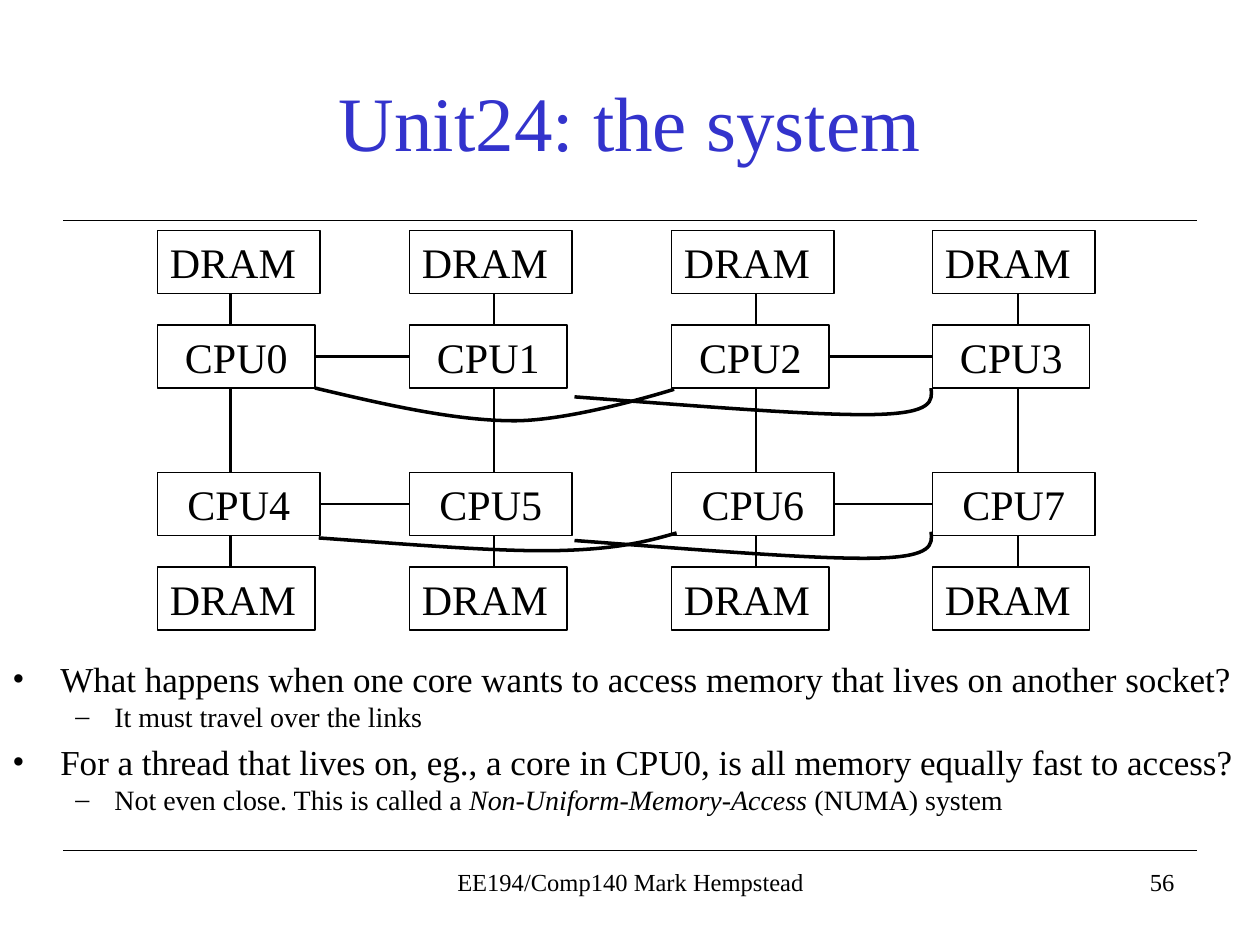
from lxml import etree
from pptx import Presentation
from pptx.dml.color import RGBColor
from pptx.enum.shapes import MSO_CONNECTOR, MSO_SHAPE
from pptx.enum.text import MSO_ANCHOR, MSO_AUTO_SIZE, PP_ALIGN
from pptx.oxml.ns import qn
from pptx.util import Inches, Pt

BLACK = RGBColor(0, 0, 0)
WHITE = RGBColor(255, 255, 255)
BLUE = RGBColor(0x33, 0x33, 0xCC)
FONT = "Times New Roman"
LEFT, CENTER, RIGHT = PP_ALIGN.LEFT, PP_ALIGN.CENTER, PP_ALIGN.RIGHT
TOP, MIDDLE = MSO_ANCHOR.TOP, MSO_ANCHOR.MIDDLE
GROW = MSO_AUTO_SIZE.SHAPE_TO_FIT_TEXT
STRAIGHT = MSO_CONNECTOR.STRAIGHT
RECT = MSO_SHAPE.RECTANGLE

COLS = [1.25, 3.25, 5.33, 7.4]
BUSES = [(1.83, 2.17), (3.92, 2.25), (6, 2.25), (8.08, 2.25)]
ROWS = [
    (1.83, 1.29, None),
    (2.58, 1.25, 0),
    (3.75, 1.29, 4),
    (4.5, 1.25, None),
]
CURVES = [
    [(2.5, 3.08), (3.05, 3.21), (3.61, 3.34), (4.08, 3.34),
     (4.56, 3.34), (5.35, 3.09), (5.35, 3.09)],
    [(2.53, 4.27), (3.24, 4.32), (3.94, 4.38), (4.42, 4.37),
     (4.89, 4.36), (5.13, 4.3), (5.37, 4.23)],
]
HOOK = [(4.56, 3.15), (5.51, 3.22), (6.46, 3.3), (6.94, 3.29),
        (7.41, 3.28), (7.4, 3.18), (7.39, 3.08)]
HOOK_DROP = 1.14
POINTS = [
    (0, ["What happens when one core wants to access memory that lives on another socket?"]),
    (1, ["It must travel over the links"]),
    (0, ["For a thread that lives on, eg., a core in CPU0, is all memory equally fast to access?"]),
    (1, ["Not even close. This is called a ", "Non-Uniform-Memory-Access ", "(NUMA) system"]),
]
LEVELS = [(20, 0.38, -0.38, "•", 4), (16, 0.81, -0.31, "–", 0)]


class Deck:
    """Hold the style and the current slide."""

    def __init__(self):
        self.prs = Presentation()
        self.prs.slide_width = Inches(10)
        self.prs.slide_height = Inches(7.5)
        self.slide = self.prs.slides.add_slide(self.prs.slide_layouts[6])
        self.shapes = self.slide.shapes

    def style(self, para, size, color=BLACK, align=LEFT):
        para.alignment = align
        para.font.name = FONT
        para.font.size = Pt(size)
        para.font.color.rgb = color

    def frame(self, x, y, w, h, anchor=TOP):
        area = self.shapes.add_textbox(Inches(x), Inches(y), Inches(w), Inches(h))
        area.text_frame.word_wrap = True
        area.text_frame.vertical_anchor = anchor
        return area.text_frame

    def text(self, words, x, y, w, h, size, color=BLACK, align=CENTER, anchor=TOP):
        para = self.frame(x, y, w, h, anchor).paragraphs[0]
        para.text = words
        self.style(para, size, color, align)

    def line(self, x1, y1, x2, y2, width):
        link = self.shapes.add_connector(
            STRAIGHT, Inches(x1), Inches(y1), Inches(x2), Inches(y2))
        link.line.color.rgb = BLACK
        link.line.width = Pt(width)
        etree.SubElement(link._element.spPr, qn("a:effectLst"))
        return link

    def join(self, start, end):
        link = self.line(0, 0, 1, 1, 1.5)
        link.begin_connect(start, 3)
        link.end_connect(end, 1)

    def box(self, words, x, y, w, align):
        box = self.shapes.add_shape(RECT, Inches(x), Inches(y), Inches(w), Inches(0.5))
        box.shadow.inherit = False
        box.fill.solid()
        box.fill.fore_color.rgb = WHITE
        box.line.color.rgb = BLACK
        box.line.width = Pt(0.75)
        box.text_frame.auto_size = GROW
        box.text_frame.vertical_anchor = TOP
        para = box.text_frame.paragraphs[0]
        para.text = words
        self.style(para, 24, align=align)
        return box

    def curve(self, pts):
        spots = [(Inches(x), Inches(y)) for x, y in pts]
        pen = self.shapes.build_freeform(*spots[0])
        pen.add_line_segments(spots[3::3], close=False)
        wire = pen.convert_to_shape()
        wire.shadow.inherit = False
        wire.fill.background()
        wire.line.color.rgb = BLACK
        wire.line.width = Pt(2)
        for i, leg in enumerate(list(wire._element.iter(qn("a:lnTo")))):
            bend = etree.Element(qn("a:cubicBezTo"))
            for x, y in spots[3 * i + 1:3 * i + 4]:
                etree.SubElement(bend, qn("a:pt"),
                                 x=str(x - wire.left), y=str(y - wire.top))
            leg.getparent().replace(leg, bend)

    def bullets(self, items, x, y, w, h):
        frame = self.frame(x, y, w, h)
        for i, (level, parts) in enumerate(items):
            para = frame.add_paragraph() if i else frame.paragraphs[0]
            size, left, hang, mark, gap = LEVELS[level]
            para.level = level
            para.space_before = Pt(gap)
            self.style(para, size)
            for n, part in enumerate(parts):
                run = para.add_run()
                run.text = part
                if n == 1:
                    run.font.italic = True
            props = para._p.get_or_add_pPr()
            props.set("marL", str(Inches(left)))
            props.set("indent", str(Inches(hang)))
            base = props.find(qn("a:defRPr"))
            base.addprevious(etree.Element(qn("a:buFont"), typeface=FONT))
            base.addprevious(etree.Element(qn("a:buChar"), char=mark))


def main():
    deck = Deck()
    for y in (6.75, 1.75):
        deck.line(0.5, y, 9.5, y, 0.75)
    deck.text("56", 6.25, 6.83, 3.17, 0.5, 14, align=RIGHT)
    for x, y in BUSES:
        deck.line(x, y, x, y + 2.5, 1.5)
    deck.text("Unit24: the system", 0.75, 0.33, 8.5, 1.25, 44, BLUE, anchor=MIDDLE)
    deck.bullets(POINTS, 0, 5.17, 9.92, 1.58)
    deck.text("EE194/Comp140 Mark Hempstead", 3.42, 6.83, 3.17, 0.5, 14)

    for y, w, first in ROWS:
        if first is None:
            for x in COLS:
                deck.box("DRAM", x, y, w, LEFT)
        else:
            cpus = [deck.box(f"CPU{first + i}", x, y, w, CENTER)
                    for i, x in enumerate(COLS)]
            for i in (0, 2):
                deck.join(cpus[i], cpus[i + 1])

    for pts in CURVES:
        deck.curve(pts)
    for drop in (HOOK_DROP, 0):
        deck.curve([(x, y + drop) for x, y in HOOK])
    deck.prs.save("out.pptx")


if __name__ == "__main__":
    main()
